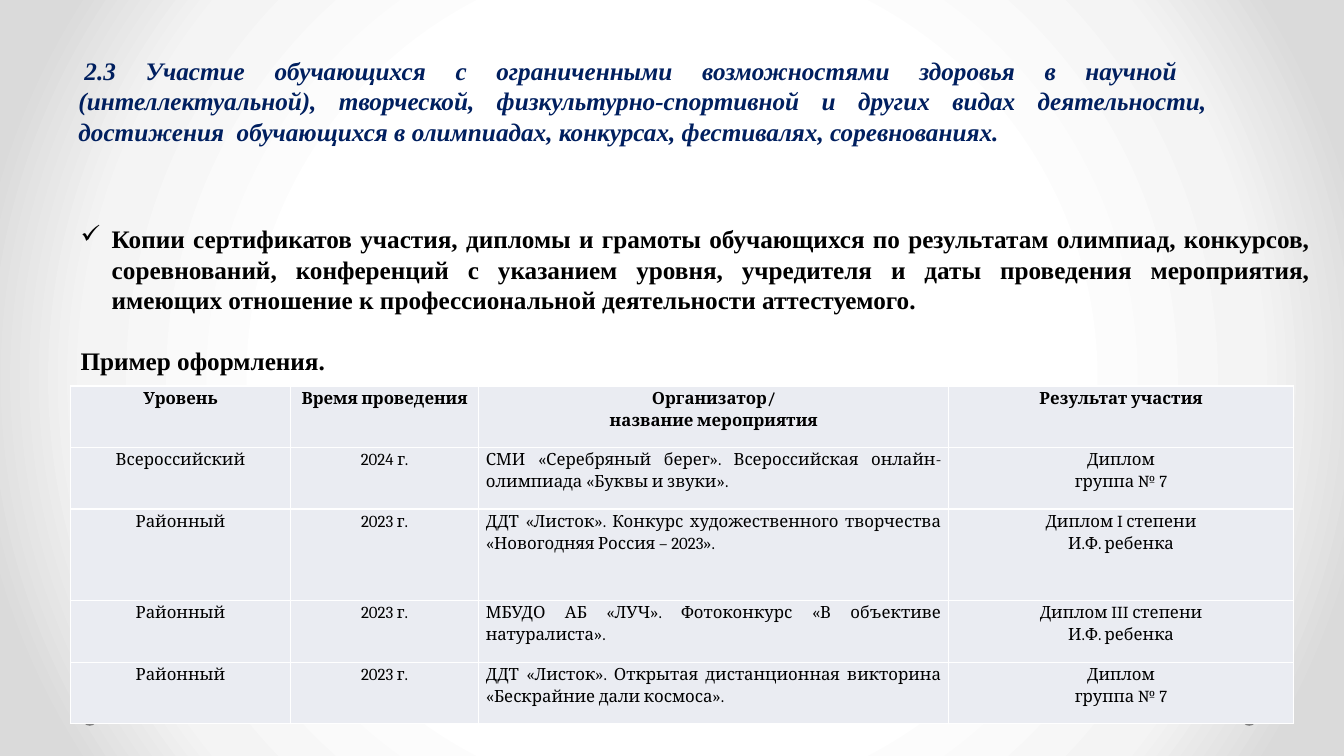
import pptx
import pptx.dml.color
import pptx.enum.shapes
import pptx.enum.text
import pptx.oxml
import pptx.oxml.ns
import pptx.util

Inches = pptx.util.Inches
Pt = pptx.util.Pt
ALIGN = pptx.enum.text.PP_ALIGN
NAMESPACES = pptx.oxml.ns.nsdecls("a", "p")


def color(value):
    return pptx.dml.color.RGBColor.from_string(value)


def write(para, text, font="Times New Roman", size=18, ink="000000", bold=False,
          italic=False, align=ALIGN.JUSTIFY, line=1.0, before=0):
    para.alignment = align
    para.line_spacing = line
    para.space_before = Pt(before)
    span = para.add_run()
    span.text = text
    span.font.name = font
    span.font.size = Pt(size)
    span.font.bold = bold
    span.font.italic = italic
    span.font.color.rgb = color(ink)


def indent(para, left=0.0, first=0.0, right=0.0, bullet=None):
    properties = para._p.get_or_add_pPr()
    for name, length in (("marL", left), ("indent", first), ("marR", right)):
        properties.set(name, str(int(Inches(length))))
    if bullet:
        properties.append(pptx.oxml.parse_xml(f'<a:buChar {NAMESPACES} char="{bullet}"/>'))


class SlideBuilder:
    cell_fill = "EAECF2"
    border = "FFFFFF"
    dot_fill = "808080"

    def __init__(self, page):
        self.page = page

    def background(self, stops):
        marks = "".join(f'<a:gs pos="{place * 1000}"><a:srgbClr val="{shade}"/></a:gs>'
                        for place, shade in stops)
        center = 'l="50000" t="50000" r="50000" b="50000"'
        self.page._element.cSld.insert(0, pptx.oxml.parse_xml(
            f'<p:bg {NAMESPACES}><p:bgPr><a:gradFill rotWithShape="1">'
            f'<a:gsLst>{marks}</a:gsLst>'
            f'<a:path path="circle"><a:fillToRect {center}/></a:path>'
            '</a:gradFill><a:effectLst/></p:bgPr></p:bg>'))

    def dot(self, left, top):
        shape = self.page.shapes.add_shape(
            pptx.enum.shapes.MSO_SHAPE.OVAL,
            Inches(left), Inches(top), Inches(0.12), Inches(0.09))
        shape.shadow.inherit = False
        shape.fill.solid()
        shape.fill.fore_color.rgb = color(self.dot_fill)
        shape.line.fill.background()

    def text_box(self, left, top, width, height):
        box = self.page.shapes.add_textbox(
            Inches(left), Inches(top), Inches(width), Inches(height))
        box.text_frame.word_wrap = True
        return box.text_frame

    def table(self, left, top, widths, heights, rows):
        table = self.page.shapes.add_table(
            len(rows), len(widths), Inches(left), Inches(top),
            Inches(sum(widths)), Inches(sum(heights))).table
        for column, width in zip(table.columns, widths):
            column.width = Inches(width)
        for row, height in zip(table.rows, heights):
            row.height = Inches(height)
        for row_index, texts in enumerate(rows):
            for column_index, text in enumerate(texts):
                header = row_index == 0
                justified = column_index == 2 and not header
                self.cell(table.cell(row_index, column_index), text, bold=header,
                          align=ALIGN.JUSTIFY if justified else ALIGN.CENTER)

    def cell(self, cell, text, **style):
        cell.margin_left = cell.margin_right = Inches(0.07)
        cell.margin_top = cell.margin_bottom = 0
        for index, line in enumerate(text.split("\n")):
            frame = cell.text_frame
            para = frame.add_paragraph() if index else frame.paragraphs[0]
            write(para, line, font="Cambria", size=12, line=1.15, **style)
        properties = cell._tc.get_or_add_tcPr()
        for side in ("lnL", "lnR", "lnT", "lnB"):
            properties.append(pptx.oxml.parse_xml(
                f'<a:{side} {NAMESPACES} w="12700"><a:solidFill>'
                f'<a:srgbClr val="{self.border}"/></a:solidFill></a:{side}>'))
        cell.fill.solid()
        cell.fill.fore_color.rgb = color(self.cell_fill)


def main():
    deck = pptx.Presentation()
    deck.slide_width = Inches(13.33)
    deck.slide_height = Inches(7.5)
    builder = SlideBuilder(deck.slides.add_slide(deck.slide_layouts[6]))

    # Backdrop
    builder.background([(50, "FFFFFF"), (76, "F4F4F4"), (92, "DADADA")])
    for left in (12.33, 0.83):
        builder.dot(left, 7.11)

    # Heading
    heading = builder.text_box(0.67, 0.5, 12, 1.33).paragraphs[0]
    write(heading,
          "2.3 Участие обучающихся с ограниченными возможностями здоровья в научной  "
          "(интеллектуальной), творческой, физкультурно-спортивной и других видах "
          "деятельности, достижения  обучающихся в олимпиадах, конкурсах, фестивалях, "
          "соревнованиях.",
          ink="001F5F", bold=True, italic=True, before=1)
    indent(heading, left=0.01, first=0.06, right=0.6)

    # Requirements
    body = builder.text_box(0.7, 2.17, 12.42, 2.22)
    requirement = body.paragraphs[0]
    write(requirement,
          "Копии сертификатов участия, дипломы и грамоты обучающихся по результатам "
          "олимпиад, конкурсов, соревнований, конференций с указанием уровня, учредителя "
          "и даты проведения мероприятия, имеющих отношение к профессиональной "
          "деятельности аттестуемого.", bold=True)
    indent(requirement, left=0.31, first=-0.31, right=0.03, bullet="✓")
    write(body.add_paragraph(), "Пример оформления.", bold=True, before=21.7)

    # Example table
    builder.table(
        0.7, 3.83, [2.18, 1.87, 4.66, 3.42], [0.61, 0.61, 0.91, 0.61, 0.61],
        [("Уровень", "Время проведения", "Организатор/\nназвание мероприятия",
          "Результат участия"),
         ("Всероссийский", "2024 г.",
          "СМИ «Серебряный берег». Всероссийская онлайн-олимпиада «Буквы и звуки».",
          "Диплом\nгруппа № 7"),
         ("Районный", "2023 г.",
          "ДДТ «Листок». Конкурс художественного творчества «Новогодняя Россия – 2023».",
          "Диплом I степени\nИ.Ф. ребенка"),
         ("Районный", "2023 г.",
          "МБУДО АБ «ЛУЧ». Фотоконкурс «В объективе натуралиста».",
          "Диплом III степени\nИ.Ф. ребенка"),
         ("Районный", "2023 г.",
          "ДДТ «Листок». Открытая дистанционная викторина «Бескрайние дали космоса».",
          "Диплом\nгруппа № 7")])

    deck.save("out.pptx")


if __name__ == "__main__":
    main()
